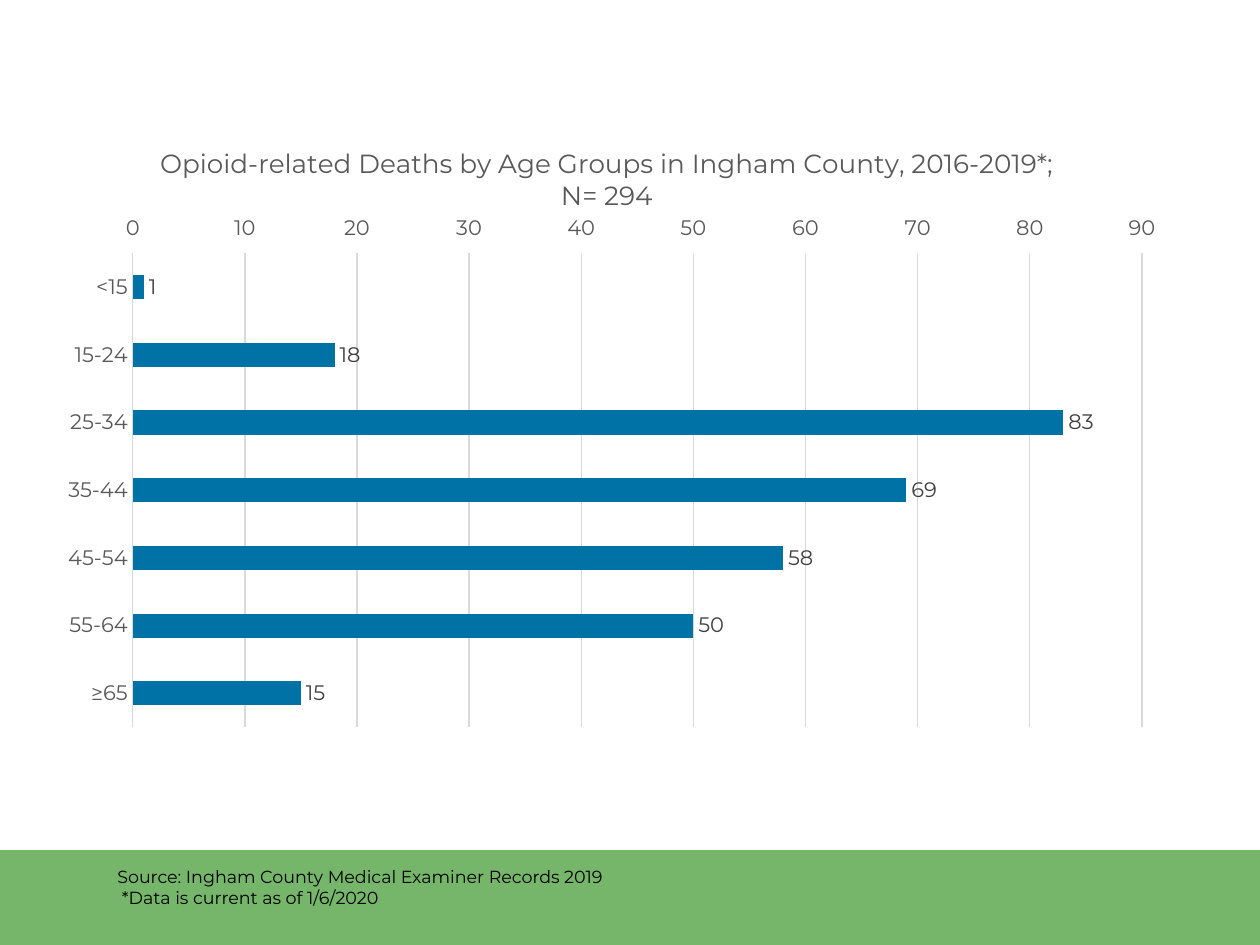
from pptx import Presentation
from pptx import util as u
from pptx.chart.data import CategoryChartData
from pptx.dml.color import RGBColor
from pptx.enum import chart as c, shapes, text
from pptx.oxml import parse_xml
from pptx.oxml.ns import nsdecls

FONT = "Montserrat"
GREEN = RGBColor(0x75, 0xB6, 0x6A)
BLUE = RGBColor(0x00, 0x72, 0xA6)
BLACK = RGBColor(0x00, 0x00, 0x00)
DARK_GREY = RGBColor(0x40, 0x40, 0x40)
GREY = RGBColor(0x59, 0x59, 0x59)
LIGHT_GREY = RGBColor(0xD9, 0xD9, 0xD9)

DEATHS = {"≥65": 15, "55-64": 50, "45-54": 58, "35-44": 69,
          "25-34": 83, "15-24": 18, "<15": 1}


def px(*lengths):
    """Turn pixels, 126 to the inch, into EMU."""
    return [u.Emu(round(length * 914400 / 126)) for length in lengths]


def style_font(font, size, color):
    font.name = FONT
    font.size = u.Pt(size)
    font.bold = False
    font.color.rgb = color


presentation = Presentation()
presentation.slide_width, presentation.slide_height = px(1260, 945)
slide = presentation.slides.add_slide(presentation.slide_layouts[6])

# Footer band
band = slide.shapes.add_shape(shapes.MSO_SHAPE.RECTANGLE, *px(0, 850, 1260, 95))
band.shadow.inherit = False
band.fill.solid()
band.fill.fore_color.rgb = GREEN
band.line.fill.background()

# Deaths by age group
data = CategoryChartData()
data.categories = list(DEATHS)
data.add_series("Series 1", list(DEATHS.values()))
chart = slide.shapes.add_chart(
    c.XL_CHART_TYPE.BAR_CLUSTERED, *px(42, 116, 1134, 624), data).chart
style_font(chart.font, 10, BLACK)
chart.has_legend = False

title = chart.chart_title.text_frame
title.text = "Opioid-related Deaths by Age Groups in Ingham County, 2016-2019*; N= 294"
style_font(title.paragraphs[0].font, 15, GREY)

plot = chart.plots[0]
plot.gap_width = 182
plot.vary_by_categories = False
bars = plot.series[0].format.fill
bars.solid()
bars.fore_color.rgb = BLUE
plot.has_data_labels = True
labels = plot.data_labels
labels.show_value = True
labels.position = c.XL_LABEL_POSITION.OUTSIDE_END
style_font(labels.font, 12, DARK_GREY)

for axis in (chart.category_axis, chart.value_axis):
    axis.major_tick_mark = axis.minor_tick_mark = c.XL_TICK_MARK.NONE
    style_font(axis.tick_labels.font, 12, GREY)

age_axis, count_axis = chart.category_axis, chart.value_axis
count_axis.minimum_scale, count_axis.maximum_scale = 0, 90
count_axis.major_unit = 10
count_axis.tick_label_position = c.XL_TICK_LABEL_POSITION.HIGH
count_axis.format.line.fill.background()
count_axis.has_major_gridlines = True
for line in (age_axis.format.line, count_axis.major_gridlines.format.line):
    line.color.rgb = LIGHT_GREY
    line.width = u.Pt(0.75)

# Place the title and the inner plot area as fractions of the chart
title_element = chart.chart_title._element
plot_area = chart._chartSpace.chart.plotArea
for parent, index, target, place in (
        (title_element, 1, "", {"x": 0.1, "y": 0.04}),
        (plot_area, 0, '<c:layoutTarget val="inner"/>',
         {"x": 0.08, "y": 0.22, "w": 0.89, "h": 0.76})):
    for old_layout in parent.findall("{*}layout"):
        parent.remove(old_layout)
    fractions = "".join(f'<c:{name} val="{value}"/>' for name, value in place.items())
    parent.insert(index, parse_xml(
        f'<c:layout {nsdecls("c")}><c:manualLayout>{target}<c:xMode val="edge"/>'
        f'<c:yMode val="edge"/>{fractions}</c:manualLayout></c:layout>'))

# Source note
note = slide.shapes.add_textbox(*px(105, 860, 1018, 55)).text_frame
note.word_wrap = True
note.auto_size = text.MSO_AUTO_SIZE.SHAPE_TO_FIT_TEXT
note.text = ("Source: Ingham County Medical Examiner Records 2019\n"
             " *Data is current as of 1/6/2020")
for paragraph in note.paragraphs:
    style_font(paragraph.font, 10, BLACK)

presentation.save("out.pptx")
